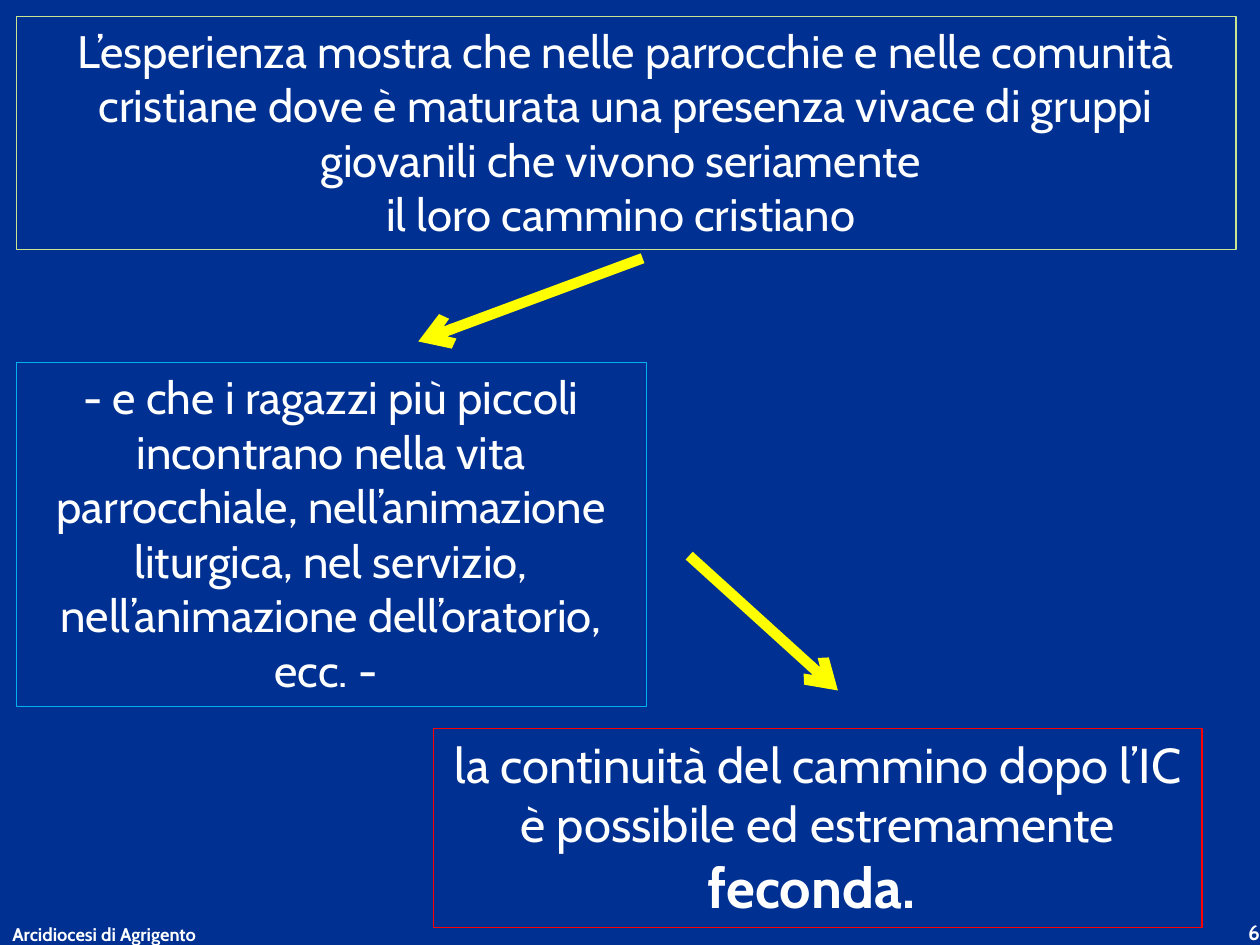
import pptx
import pptx.util
import pptx.dml.color
import pptx.enum.shapes
import pptx.enum.text
import pptx.oxml.ns
from lxml import etree

Inches, Pt = pptx.util.Inches, pptx.util.Pt
ALIGN = pptx.enum.text.PP_ALIGN
ANCHOR = pptx.enum.text.MSO_ANCHOR
FIT = pptx.enum.text.MSO_AUTO_SIZE
FONT = "Cabin"
W, H = 10, 7.5
COLORS = {"bg": "003192", "text": "FFFFFF", "arrow": "FFFF00",
          "premise": "C7E68F", "meeting": "00B0F0", "outcome": "FF0000"}

BOXES = [
    ("meeting", (0.13, 2.88, 5, 2.73), [
        [("- e che i ragazzi più piccoli incontrano nella vita parrocchiale, "
          "nell’animazione liturgica, nel servizio, nell’animazione "
          "dell’oratorio, ecc. - ", 26, False)]]),
    ("outcome", (3.44, 5.78, 6.1, 1.58), [
        [("la continuità del cammino dopo l’IC è possibile ed estremamente ", 28, False),
         ("feconda. ", 32, True)]]),
    ("premise", (0.13, 0.13, 9.68, 1.85), [
        [("L’esperienza mostra che nelle parrocchie e nelle comunità cristiane "
          "dove è maturata una presenza vivace di gruppi giovanili che vivono "
          "seriamente ", 26, False)],
        [("il loro cammino cristiano ", 26, False)]]),
]
ARROWS = [((5.1, 2.05), (3.32, 2.71)), ((5.47, 4.41), (6.65, 5.48))]
FOOT_H = 0.25
FOOTERS = [("6", 12, W - 0.64, 0.64, 0, ALIGN.RIGHT),
           ("Arcidiocesi di Agrigento", 10.5, 0, 4, 0.1, ALIGN.LEFT)]


def rgb(name):
    return pptx.dml.color.RGBColor.from_string(COLORS[name])


def set_all(obj, values):
    for key, value in values.items():
        setattr(obj, key, value)


def write(tf, paragraphs, align):
    for i, runs in enumerate(paragraphs):
        p = tf.add_paragraph() if i else tf.paragraphs[0]
        p.alignment = align
        for text, size, bold in runs:
            r = p.add_run()
            r.text = text
            set_all(r.font, {"name": FONT, "size": Pt(size), "bold": bold})
            r.font.color.rgb = rgb("text")


def add_box(s, color, at, paragraphs):
    sp = s.shapes.add_shape(pptx.enum.shapes.MSO_SHAPE.RECTANGLE, *map(Inches, at))
    sp.shadow.inherit = False
    sp.fill.background()
    sp.line.color.rgb = rgb(color)
    sp.line.width = Pt(0.75)
    set_all(sp.text_frame, {"word_wrap": True, "vertical_anchor": ANCHOR.TOP,
                            "auto_size": FIT.SHAPE_TO_FIT_TEXT})
    write(sp.text_frame, paragraphs, ALIGN.CENTER)


def add_arrow(s, start, end):
    cx = s.shapes.add_connector(pptx.enum.shapes.MSO_CONNECTOR.STRAIGHT,
                                *map(Inches, start + end))
    cx.line.color.rgb = rgb("arrow")
    cx.line.width = Pt(6)
    qn = pptx.oxml.ns.qn
    etree.SubElement(cx.line._get_or_add_ln(), qn("a:tailEnd"), type="arrow")
    etree.SubElement(cx._element.spPr, qn("a:effectLst"))


def add_footer(s, text, size, left, width, inset, align):
    sp = s.shapes.add_textbox(*map(Inches, (left, H - FOOT_H, width, FOOT_H)))
    set_all(sp.text_frame, {"word_wrap": True, "vertical_anchor": ANCHOR.BOTTOM,
                            "margin_left": Inches(inset), "margin_right": Inches(inset),
                            "margin_top": 0, "margin_bottom": 0})
    write(sp.text_frame, [[(text, size, True)]], align)


def main():
    prs = pptx.Presentation()
    set_all(prs, {"slide_width": Inches(W), "slide_height": Inches(H)})
    s = prs.slides.add_slide(prs.slide_layouts[6])
    s.background.fill.solid()
    s.background.fill.fore_color.rgb = rgb("bg")
    for box in BOXES:
        add_box(s, *box)
    for arrow in ARROWS:
        add_arrow(s, *arrow)
    for footer in FOOTERS:
        add_footer(s, *footer)
    prs.save("out.pptx")


if __name__ == "__main__":
    main()
